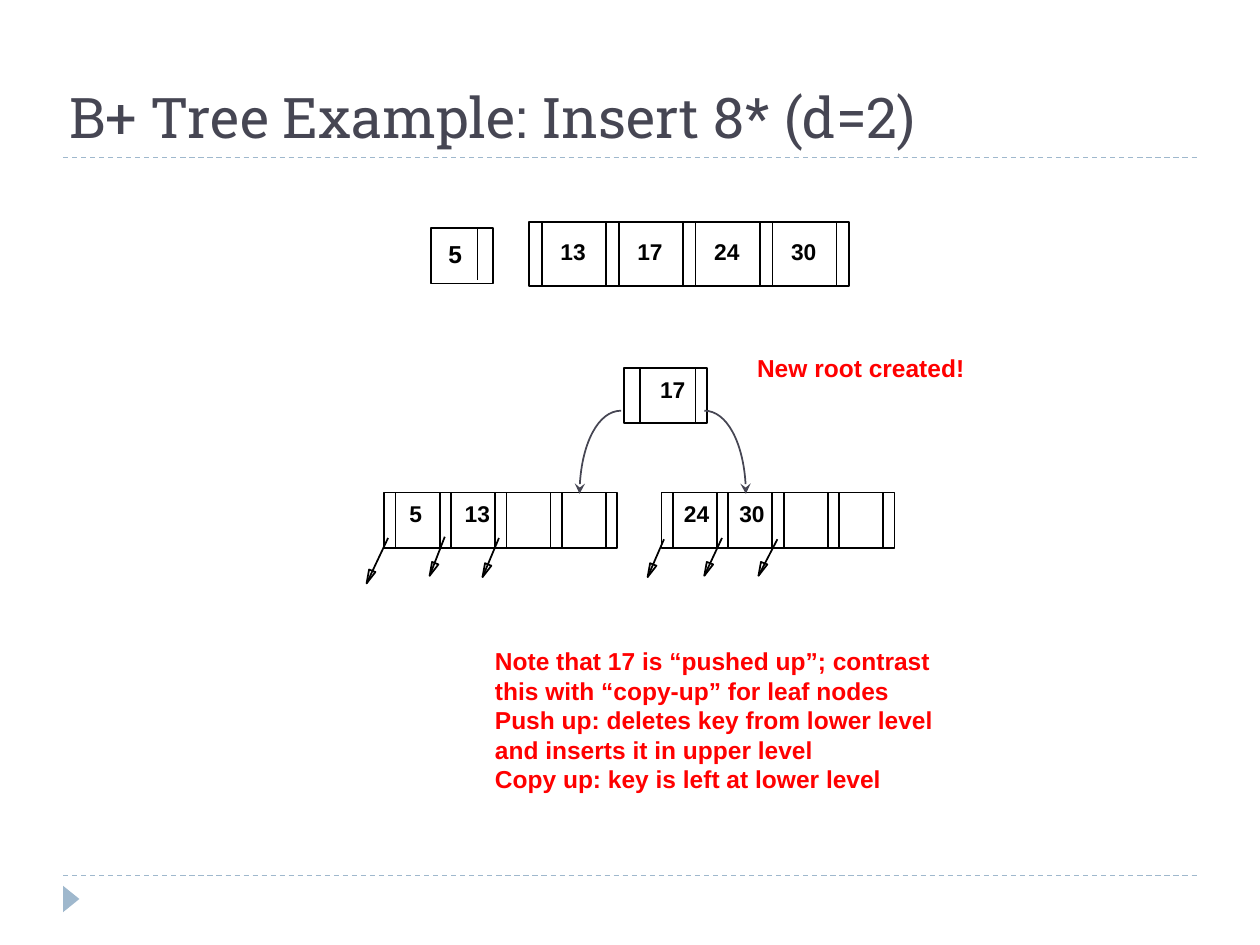
from pptx import Presentation
from pptx import util as u
from pptx.dml.color import RGBColor
from pptx.enum import dml, shapes, text
from pptx.oxml.ns import qn
from lxml import etree

# Content
TITLE = "B+ Tree Example: Insert 8* (d=2)"
ROOT_NOTE = "New root created!"
NOTES = [
    "Note that 17 is “pushed up”; contrast this with “copy-up” for leaf nodes",
    "Push up: deletes key from lower level and inserts it in upper level",
    "Copy up: key is left at lower level",
]
# Four-key nodes: left, top, pitch, pointer width, height, key offset, keys
NODES = [
    (4.2, 1.76, 0.61, 0.1, 0.51, (0.15, 0.08), ["13", "17", "24", "30"]),
    (3.05, 3.91, 0.44, 0.09, 0.44, (0.1, 0.01), ["5", "13"]),
    (5.25, 3.91, 0.44, 0.09, 0.44, (0.08, 0.01), ["24", "30"]),
]
# Leaf pointers: start, tip
LEAVES = [
    ((3.08, 4.27), (2.91, 4.63)), ((3.53, 4.26), (3.41, 4.57)),
    ((3.96, 4.27), (3.83, 4.58)), ((5.27, 4.28), (5.14, 4.58)),
    ((5.73, 4.27), (5.59, 4.57)), ((6.17, 4.28), (6.02, 4.57)),
]
# Child links of the root: start, end
LINKS = [((5.59, 3.26), (5.92, 3.92)), ((4.93, 3.26), (4.6, 3.92))]

THEME = {
    "head": "Roboto Slab", "body": "Arial",
    "title": 32, "note": 14, "key": 13,
    "dark": "464653", "rule": "9FB8CD", "red": "FF0000", "ink": "000000",
}

deck = Presentation()
deck.slide_width, deck.slide_height = u.Inches(10), u.Inches(7.5)
slide = deck.slides.add_slide(deck.slide_layouts[6])
items = slide.shapes


def color(name):
    return RGBColor.from_string(THEME[name])


def stroke(line, name="ink", width=1):
    line.color.rgb = color(name)
    line.width = u.Pt(width)


def label(lines, box, size="note", tint="ink", font="body", wrap=False,
          bold=True, anchor=text.MSO_ANCHOR.TOP):
    frame = items.add_textbox(*map(u.Inches, box)).text_frame
    frame.word_wrap = wrap
    frame.vertical_anchor = anchor
    frame.text = "\n".join(lines)
    for para in frame.paragraphs:
        face = para.runs[0].font
        face.name, face.size, face.bold = THEME[font], u.Pt(THEME[size]), bold
        face.color.rgb = color(tint)


def key(word, x, y, size="key"):
    label([word], (x, y, 0.2 + 0.1 * len(word), 0.31), size)


def line(start, end, tint="ink", width=1):
    link = items.add_connector(shapes.MSO_CONNECTOR.STRAIGHT,
                               *map(u.Inches, (*start, *end)))
    stroke(link.line, tint, width)
    etree.SubElement(link._element.spPr, qn("a:effectLst"))
    return link


def cell(x, y, w, h):
    box = items.add_shape(shapes.MSO_SHAPE.RECTANGLE,
                          *map(u.Inches, (x, y, w, h)))
    box.shadow.inherit = False
    box.fill.background()
    stroke(box.line)


def outline(points, close, tint="ink"):
    pts = [(u.Inches(x), u.Inches(y)) for x, y in points]
    pen = items.build_freeform(*pts[0])
    pen.add_line_segments(pts[1:], close=close)
    form = pen.convert_to_shape()
    form.shadow.inherit = False
    form.fill.background()
    stroke(form.line, tint)
    return form


def curve(start, end):
    """Quarter ellipse that leaves sideways and arrives pointing down."""
    form = outline([start, end], False, "dark")
    (x0, y0), (x1, y1) = start, end
    left = min(x0, x1)
    bend = 0.55
    seg = form._element.spPr.find(".//" + qn("a:lnTo"))
    seg.tag = qn("a:cubicBezTo")
    ctrl = [(x0 + bend * (x1 - x0), y0), (x1, y1 - bend * (y1 - y0))]
    for i, (x, y) in enumerate(ctrl):
        pt = etree.Element(qn("a:pt"), x=str(u.Inches(x - left)),
                           y=str(u.Inches(y - y0)))
        seg.insert(i, pt)
    etree.SubElement(form.line._get_or_add_ln(), qn("a:tailEnd"),
                     type="stealth")


# Title, rules and page marker
label([TITLE], (0.45, 0.03, 8.5, 1.21), "title", "dark", "head", True, False,
      text.MSO_ANCHOR.BOTTOM)
for y in (6.95, 1.25):
    line((0.5, y), (9.5, y), "rule", 0.75).line.dash_style = \
        dml.MSO_LINE.DASH
mark = items.add_shape(shapes.MSO_SHAPE.ISOSCELES_TRIANGLE,
                       *map(u.Inches, (0.46, 7.07, 0.21, 0.13)))
mark.rotation = 90
mark.shadow.inherit = False
mark.fill.solid()
mark.fill.fore_color.rgb = color("rule")
mark.line.fill.background()

# Remarks
label([ROOT_NOTE], (5.91, 2.75, 1.85, 0.33), tint="red")
label(NOTES, (3.83, 5.08, 3.93, 1.28), tint="red", wrap=True)

# Four-key nodes, each closed by a last pointer slot
for x, y, pitch, slot, h, (dx, dy), keys in NODES:
    for i in range(4):
        left = x + i * pitch
        cell(left, y, pitch, h)
        line((left + slot, y), (left + slot, y + h))
    cell(x + 4 * pitch, y, slot, h)
    for i, word in enumerate(keys):
        key(word, x + i * pitch + dx, y + dy)

# Entry to insert
cell(3.42, 1.81, 0.49, 0.44)
line((3.79, 1.82), (3.79, 2.22))
key("5", 3.46, 1.85, "note")

# New root
cell(4.95, 2.92, 0.13, 0.44)
cell(5.08, 2.92, 0.53, 0.44)
line((5.52, 2.92), (5.52, 3.36))
key("17", 5.14, 2.93)

# Leaf pointers with hollow heads
for start, (x, y) in LEAVES:
    line(start, (x, y))
    outline([(x + 0.07, y - 0.09), (x, y), (x + 0.02, y - 0.11)], True)

# Links from the root
for start, end in LINKS:
    curve(start, end)

deck.save("out.pptx")
